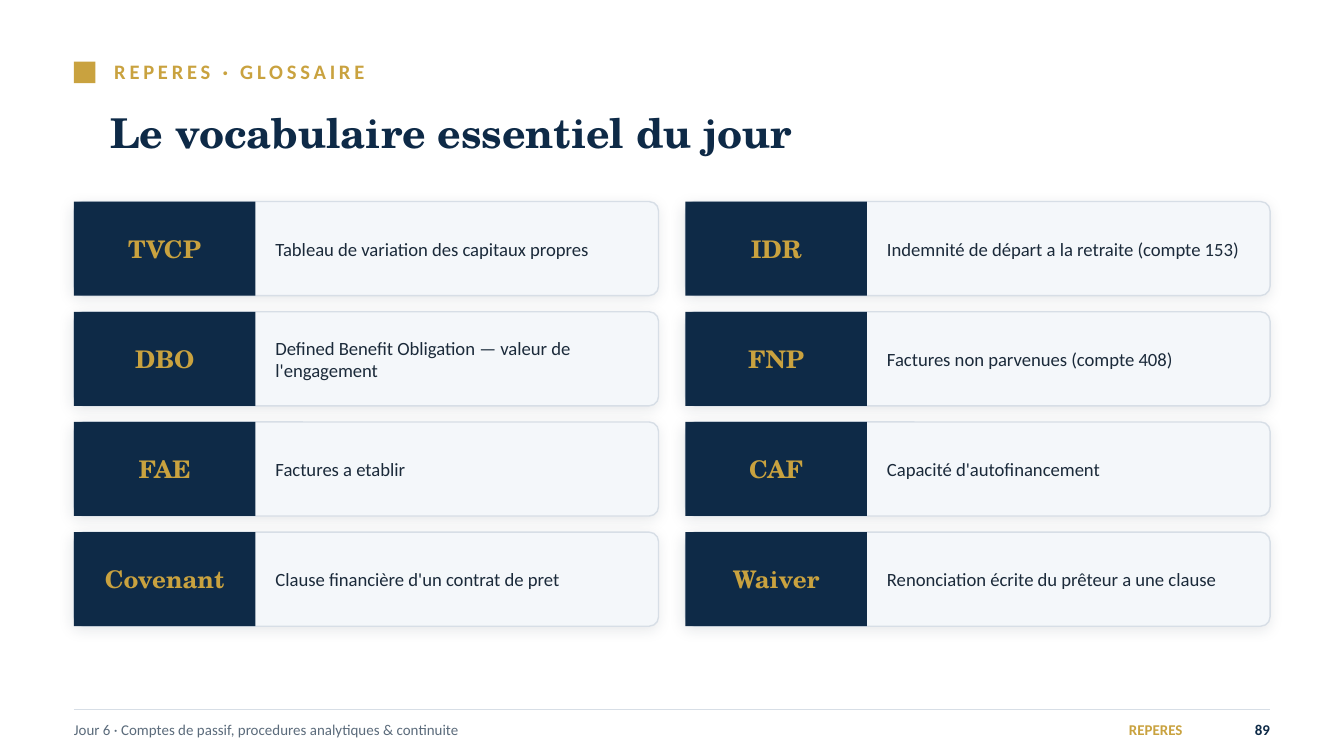
from dataclasses import dataclass
from typing import NamedTuple

from lxml import etree
from pptx import Presentation
from pptx.dml.color import RGBColor
from pptx.enum import shapes, text
from pptx.oxml import ns
from pptx import util as u


@dataclass(frozen=True)
class Theme:
    navy: str = "0E2A47"
    gold: str = "C9A23F"
    ink: str = "1B2A3A"
    muted: str = "5B6B7B"
    rule: str = "D7DEE6"
    card: str = "F4F7FA"
    serif: str = "TeX Gyre Schola"
    sans: str = "Calibri"
    title: int = 22
    term: int = 13
    label: int = 11
    body: int = 10
    footer: int = 8
    line: float = 0.75


class Area(NamedTuple):
    left: float
    top: float
    width: float
    height: float

    def lengths(self) -> list:
        return [u.Inches(value) for value in self]


class Entry(NamedTuple):
    term: str
    meaning: str


class Style(NamedTuple):
    size: int
    color: str
    font: str = Theme.sans
    bold: bool = False
    align: text.PP_ALIGN = text.PP_ALIGN.LEFT
    spacing: int = 0


THEME = Theme()
LEFT, RIGHT = 0.55, 9.45
FOOTER_TOP, FOOTER_HEIGHT = 5.3, 0.25
GRID_TOP, COLUMNS = 1.5, 2
CARD_WIDTH, CARD_HEIGHT = 4.35, 0.7
COLUMN_GAP, ROW_GAP = 0.2, 0.12
TERM_WIDTH, PADDING = 1.35, 0.15

ENTRIES = [
    Entry("TVCP", "Tableau de variation des capitaux propres"),
    Entry("IDR", "Indemnité de départ a la retraite (compte 153)"),
    Entry("DBO", "Defined Benefit Obligation — valeur de l'engagement"),
    Entry("FNP", "Factures non parvenues (compte 408)"),
    Entry("FAE", "Factures a etablir"),
    Entry("CAF", "Capacité d'autofinancement"),
    Entry("Covenant", "Clause financière d'un contrat de pret"),
    Entry("Waiver", "Renonciation écrite du prêteur a une clause"),
]


def add_text(page, area: Area, content: str, style: Style) -> None:
    box = page.shapes.add_textbox(*area.lengths())
    frame = box.text_frame
    frame.word_wrap = True
    frame.vertical_anchor = text.MSO_ANCHOR.MIDDLE
    frame.margin_left = frame.margin_right = 0
    frame.margin_top = frame.margin_bottom = 0
    frame.text = content
    para = frame.paragraphs[0]
    para.alignment = style.align
    span = para.runs[0]
    span.font.size = u.Pt(style.size)
    span.font.name = style.font
    span.font.bold = style.bold
    span.font.color.rgb = RGBColor.from_string(style.color)
    if style.spacing:
        span._r.get_or_add_rPr().set("spc", str(style.spacing * 100))


def add_block(page, area: Area, color: str, kind=shapes.MSO_SHAPE.RECTANGLE):
    block = page.shapes.add_shape(kind, *area.lengths())
    block.shadow.inherit = False
    block.fill.solid()
    block.fill.fore_color.rgb = RGBColor.from_string(color)
    block.line.fill.background()
    return block


def add_soft_shadow(block) -> None:
    effects = block._element.spPr.find(ns.qn("a:effectLst"))
    shadow = etree.SubElement(
        effects, ns.qn("a:outerShdw"), blurRad=str(u.Pt(7)), dist=str(u.Pt(2)),
        dir=str(135 * 60000), algn="bl", rotWithShape="0")
    color = etree.SubElement(shadow, ns.qn("a:srgbClr"), val=THEME.ink)
    etree.SubElement(color, ns.qn("a:alpha"), val="10000")


def add_card(page, left: float, top: float, entry: Entry) -> None:
    card = add_block(page, Area(left, top, CARD_WIDTH, CARD_HEIGHT),
                     THEME.card, shapes.MSO_SHAPE.ROUNDED_RECTANGLE)
    card.adjustments[0] = 0.1
    card.line.color.rgb = RGBColor.from_string(THEME.rule)
    card.line.width = u.Pt(THEME.line)
    add_soft_shadow(card)

    term_area = Area(left, top, TERM_WIDTH, CARD_HEIGHT)
    add_block(page, term_area, THEME.navy)
    add_text(page, term_area, entry.term,
             Style(THEME.term, THEME.gold, THEME.serif, True, text.PP_ALIGN.CENTER))
    meaning_area = Area(left + TERM_WIDTH + PADDING, top,
                        CARD_WIDTH - TERM_WIDTH - 2 * PADDING, CARD_HEIGHT)
    add_text(page, meaning_area, entry.meaning, Style(THEME.body, THEME.ink))


def add_header(page) -> None:
    add_block(page, Area(LEFT, 0.46, 0.16, 0.16), THEME.gold)
    add_text(page, Area(0.85, 0.4, 8.6, 0.26), "REPERES · GLOSSAIRE",
             Style(THEME.label, THEME.gold, bold=True, spacing=2))
    add_text(page, Area(0.82, 0.65, 8.7, 0.66), "Le vocabulaire essentiel du jour",
             Style(THEME.title, THEME.navy, THEME.serif, True))


def add_footer(page) -> None:
    rule = page.shapes.add_connector(
        shapes.MSO_CONNECTOR.STRAIGHT, u.Inches(LEFT), u.Inches(5.28),
        u.Inches(RIGHT), u.Inches(5.28))
    rule.line.color.rgb = RGBColor.from_string(THEME.rule)
    rule.line.width = u.Pt(THEME.line)
    etree.SubElement(rule._element.spPr, ns.qn("a:effectLst"))

    right = text.PP_ALIGN.RIGHT
    for left, width, content, style in [
        (LEFT, 6.4, "Jour 6 · Comptes de passif, procedures analytiques & continuite",
         Style(THEME.footer, THEME.muted)),
        (6.9, 1.9, "REPERES", Style(THEME.footer, THEME.gold, bold=True, align=right)),
        (9, 0.45, "89", Style(THEME.footer, THEME.navy, bold=True, align=right)),
    ]:
        add_text(page, Area(left, FOOTER_TOP, width, FOOTER_HEIGHT), content, style)


def main() -> None:
    deck = Presentation()
    deck.slide_width = u.Inches(10)
    deck.slide_height = u.Inches(10 * 9 / 16)
    page = deck.slides.add_slide(deck.slide_layouts[6])
    add_header(page)
    add_footer(page)
    for index, entry in enumerate(ENTRIES):
        row, column = divmod(index, COLUMNS)
        add_card(page, LEFT + column * (CARD_WIDTH + COLUMN_GAP),
                 GRID_TOP + row * (CARD_HEIGHT + ROW_GAP), entry)
    deck.save("out.pptx")


if __name__ == "__main__":
    main()
